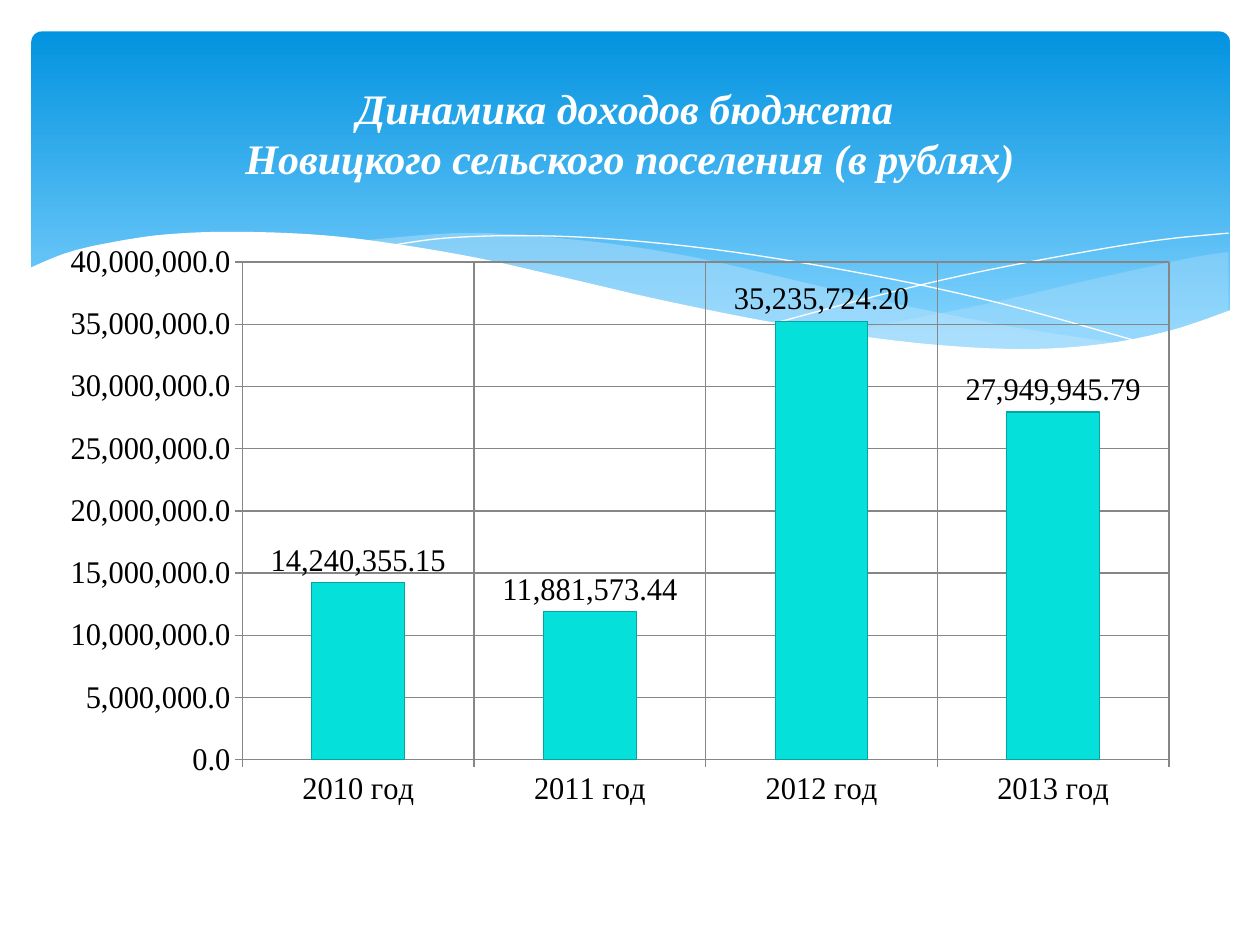
from pptx import Presentation
from pptx.chart.data import CategoryChartData
from pptx.dml.color import RGBColor
from pptx.enum.chart import XL_CHART_TYPE, XL_LABEL_POSITION, XL_TICK_MARK
from pptx.enum.shapes import MSO_SHAPE
from pptx.enum.text import MSO_ANCHOR, PP_ALIGN
from pptx.oxml import parse_xml
from pptx.oxml.ns import nsdecls, qn
from pptx.util import Inches, Pt
from lxml.etree import SubElement

COLS, ROWS = 100, 75
UNIT = Inches(10) // COLS
FONT = "Times New Roman"
INK = {"white": "FFFFFF", "black": "000000", "deep": "0293E0", "sky": "83D3FE",
       "mist": "C6E7FC", "bar": "05E0DB", "edge": "04A5A1", "grid": "868686"}
TITLE = "Динамика доходов бюджета \vНовицкого сельского поселения (в рублях)"
INCOME = {"2010 год": 14240355.15, "2011 год": 11881573.44,
          "2012 год": 35235724.20, "2013 год": 27949945.79}

RIGHT = [[(97.5, 20), (94.8, 20.4), (90.6, 21.3), (86.1, 22.3), (77.9, 24.2), (66.1, 26.5)],
         [(66.1, 26.5), (71.9, 27.1), (76.9, 27.7), (81.4, 27.8), (86.3, 27.5),
          (91.3, 26.7), (94.9, 25.7), (97.5, 24.7)]]
BACK = [[(89.3, 27.3), (80.7, 26), (70.6, 24), (62.9, 22.2), (55.5, 20.5), (48.9, 19.4),
         (42, 18.7), (36.1, 18.5), (28.6, 19.1)],
        [(28.6, 19.1), (36.2, 20.3), (44.9, 22.2), (56.6, 24.8), (66.5, 26.6),
         (74.8, 27.6), (81.8, 27.8), (89.3, 27.3)]]
FALL = [[(30.9, 19.5), (35.3, 18.9), (41.6, 18.7), (48.9, 19), (58.2, 20),
         (69.5, 21.9), (79.5, 24.1), (90.7, 27.2)]]
RISE = [[(61.3, 25.7), (69.5, 23.5), (77.6, 21.6), (86.6, 19.9), (92.4, 19), (97.5, 18.5)]]
FRONT = [[(97.7, 24.6), (93, 26.2), (87.5, 27.3), (80.9, 27.7), (72.6, 27.2), (62.6, 25.8),
          (52.9, 23.9), (44.7, 22), (36.5, 20.2), (27.1, 18.8), (19.3, 18.4), (13.2, 18.6),
          (8.5, 19.3), (5.2, 20.1), (2.3, 21.3)],
         [(2.3, 32.9), (97.7, 32.9)]]


def color(name):
    """Return the palette colour of that name."""
    return RGBColor.from_string(INK[name])


def smooth(knots, steps=6):
    """Return points on a Catmull-Rom curve through the knots."""
    if len(knots) < 3:
        return knots
    ends = [knots[0], *knots, knots[-1]]
    curve = [knots[0]]
    for a, b, c, d in zip(ends, ends[1:], ends[2:], ends[3:]):
        for k in range(1, steps + 1):
            t = k / steps
            curve.append(tuple(
                (2 * q + (r - p) * t + (2 * p - 5 * q + 4 * r - s) * t ** 2
                 + (3 * q - p - 3 * r + s) * t ** 3) / 2
                for p, q, r, s in zip(a, b, c, d)))
    return curve


def place(shape, x, y, w, h):
    """Set a shape's box in grid units."""
    shape.left, shape.top, shape.width, shape.height = (round(v * UNIT) for v in (x, y, w, h))


def wave(slide, curves, fill=None, alpha=100):
    """Draw a filled wave, or a white hairline when no fill is given."""
    dots = [(round(x * UNIT), round(y * UNIT)) for knots in curves for x, y in smooth(knots)]
    pen = slide.shapes.build_freeform(*dots[0])
    pen.add_line_segments(dots[1:], close=fill is not None)
    shape = pen.convert_to_shape()
    shape.shadow.inherit = False
    if fill is None:
        shape.fill.background()
        shape.line.color.rgb = color("white")
        shape.line.width = Pt(0)
        return
    shape.fill.solid()
    shape.fill.fore_color.rgb = color(fill)
    shape.line.fill.background()
    if alpha < 100:
        tone = shape.fill._xPr.find(".//" + qn("a:srgbClr"))
        SubElement(tone, qn("a:alpha"), val=str(alpha * 1000))


def banner(slide):
    """Draw the rounded gradient panel."""
    panel = slide.shapes.add_shape(MSO_SHAPE.ROUNDED_RECTANGLE, 0, 0, UNIT, UNIT)
    place(panel, 2.5, 2.5, 95.1, 27)
    panel.adjustments[0] = 0.03
    panel.shadow.inherit = False
    panel.line.fill.background()
    panel.fill.gradient()
    panel.fill.gradient_angle = 270
    for stop, name, spot in zip(panel.fill.gradient_stops, ("deep", "sky"), (0, 0.9)):
        stop.color.rgb = color(name)
        stop.position = spot


def style(font, size=18, ink="black"):
    """Set the typeface, size and colour of a font."""
    font.name, font.size = FONT, Pt(size)
    font.color.rgb = color(ink)


def rule(line):
    """Give a chart line the grid colour."""
    line.color.rgb = color("grid")
    line.width = Pt(0.75)


def axis(item):
    """Format one chart axis with its gridlines."""
    item.has_major_gridlines = True
    item.major_tick_mark = XL_TICK_MARK.OUTSIDE
    item.minor_tick_mark = XL_TICK_MARK.NONE
    rule(item.format.line)
    rule(item.major_gridlines.format.line)
    style(item.tick_labels.font)


def layout(chart, **box):
    """Fix the inner plot area as shares of the chart."""
    area = chart._chartSpace.find(".//" + qn("c:plotArea"))
    for old in area.findall(qn("c:layout")):
        area.remove(old)
    modes = "".join(f'<c:{k}Mode val="edge"/>' for k in "xy")
    sizes = "".join(f'<c:{k} val="{v}"/>' for k, v in box.items())
    area.insert(0, parse_xml(
        f'<c:layout {nsdecls("c")}><c:manualLayout><c:layoutTarget val="inner"/>'
        f'{modes}{sizes}</c:manualLayout></c:layout>'))


def bars(slide):
    """Add the column chart of income by year."""
    data = CategoryChartData(number_format="#,##0.00")
    data.categories = list(INCOME)
    data.add_series("Series 1", list(INCOME.values()))
    frame = slide.shapes.add_chart(XL_CHART_TYPE.COLUMN_CLUSTERED, 0, 0, UNIT, UNIT, data)
    place(frame, 5.6, 18.1, 88.9, 48.4)
    chart = frame.chart
    chart.has_legend = chart.has_title = False
    chart.font.size, chart.font.name = Pt(18), "Calibri"
    axis(chart.category_axis)
    axis(chart.value_axis)
    scale = chart.value_axis
    scale.minimum_scale, scale.maximum_scale, scale.major_unit = 0, 40000000, 5000000
    scale.tick_labels.number_format = "#,##0.0"
    scale.tick_labels.number_format_is_linked = False
    plot = chart.plots[0]
    plot.gap_width, plot.vary_by_categories = 150, False
    look = plot.series[0].format
    look.fill.solid()
    look.fill.fore_color.rgb = color("bar")
    look.line.color.rgb = color("edge")
    look.line.width = Pt(0.75)
    plot.has_data_labels = True
    tags = plot.data_labels
    tags.show_value = True
    tags.position = XL_LABEL_POSITION.OUTSIDE_END
    tags.number_format, tags.number_format_is_linked = "#,##0.00", False
    style(tags.font)
    layout(chart, x=0.12, y=0.06, w=0.86, h=0.82)
    layout(chart, x=0.124, y=0.056, w=0.856, h=0.816)


def heading(slide):
    """Fill the title and bring it in front of the banner."""
    title = slide.shapes.title
    place(title, 5, 3.7, 90, 13.7)
    frame = title.text_frame
    frame.text = TITLE
    frame.word_wrap = True
    frame.vertical_anchor = MSO_ANCHOR.MIDDLE
    para = frame.paragraphs[0]
    para.alignment = PP_ALIGN.CENTER
    style(para.font, 24, "white")
    para.font.bold = para.font.italic = True
    slide.shapes._spTree.append(title._element)


def main():
    """Build the slide and save it."""
    deck = Presentation()
    deck.slide_width, deck.slide_height = COLS * UNIT, ROWS * UNIT
    slide = deck.slides.add_slide(deck.slide_layouts[5])
    banner(slide)
    wave(slide, RIGHT, "mist", 29)
    wave(slide, BACK, "mist", 40)
    wave(slide, FALL)
    wave(slide, RISE)
    wave(slide, FRONT, "white")
    bars(slide)
    heading(slide)
    deck.save("out.pptx")


if __name__ == "__main__":
    main()
